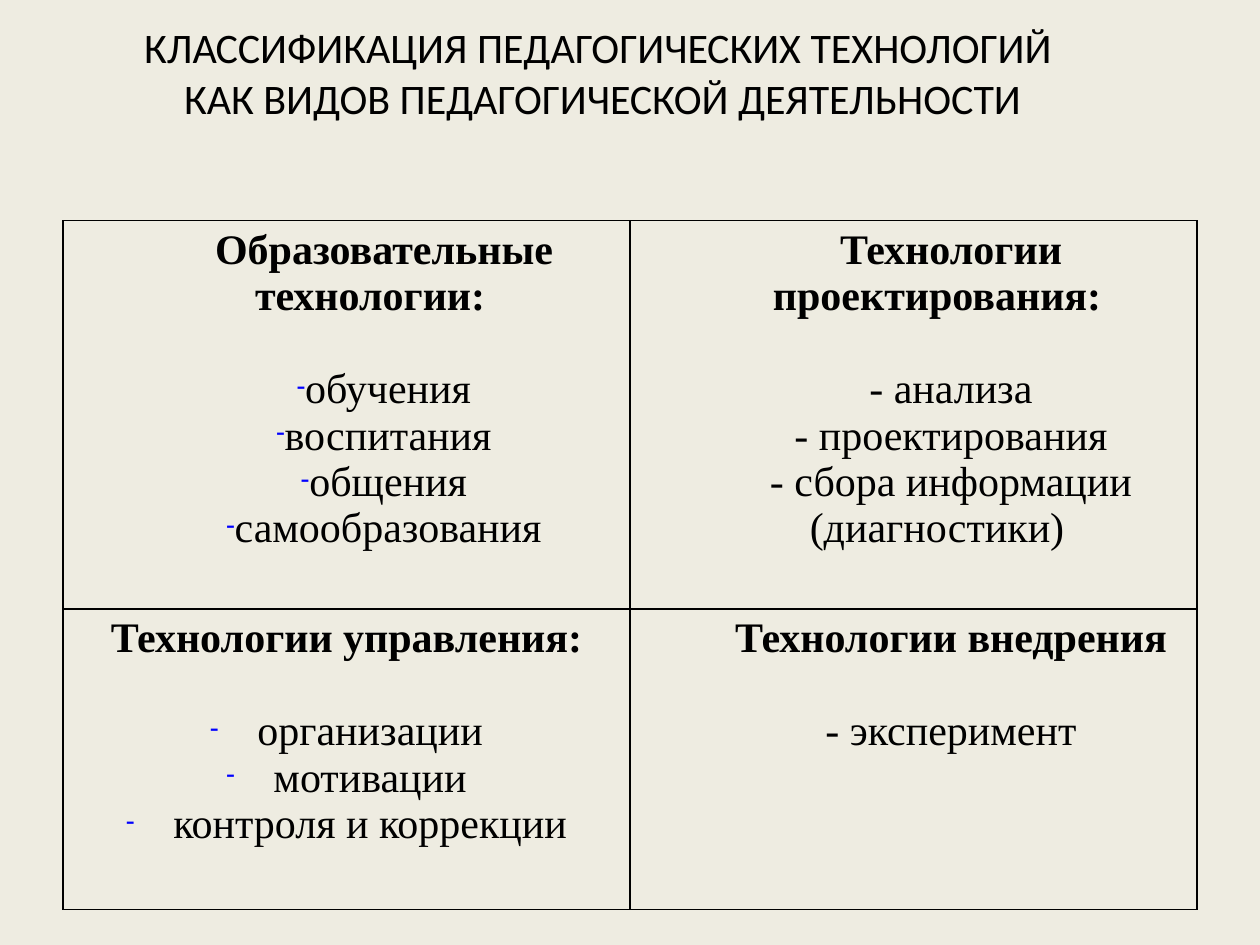
"""Build a slide that sorts teaching technologies into a two by two table."""
from dataclasses import dataclass

from lxml.etree import SubElement
from pptx import Presentation
from pptx.dml.color import RGBColor
from pptx.enum.text import MSO_ANCHOR, PP_ALIGN
from pptx.oxml import parse_xml
from pptx.oxml.ns import nsdecls, qn
from pptx.util import Cm, Pt


@dataclass(frozen=True)
class Theme:
    paper: str = "EEECE1"
    ink: str = "000000"
    dash: str = "0000FF"
    head: str = "Calibri"
    body: str = "Times New Roman"
    size: int = 24
    gap: float = 26.5
    line: int = 1


theme = Theme()


def write(para, text, font=theme.body, bold=False, after=0, left=0, indent=0, bullet=False):
    para.alignment = PP_ALIGN.CENTER
    para.space_after = Pt(after)
    for i, part in enumerate(text.split("\n")):
        if i:
            para.add_line_break()
        run = para.add_run()
        run.text = part
        run.font.name = font
        run.font.size = Pt(theme.size)
        run.font.bold = bold
        run.font.color.rgb = RGBColor.from_string(theme.ink)
    props = para._p.get_or_add_pPr()
    props.set("marL", str(Cm(left)))
    props.set("indent", str(Cm(indent)))
    if bullet:
        color = SubElement(props, qn("a:buClr"))
        SubElement(color, qn("a:srgbClr"), val=theme.dash)
        SubElement(props, qn("a:buSzPct"), val="60000")
        SubElement(props, qn("a:buChar"), char="-")
        tabs = SubElement(props, qn("a:tabLst"))
        SubElement(tabs, qn("a:tab"), pos=str(Cm(1.27)), algn="l")
    else:
        SubElement(props, qn("a:buNone"))


def border(cell):
    props = cell._tc.get_or_add_tcPr()
    for i, side in enumerate("LRTB"):
        props.insert(i, parse_xml(
            f'<a:ln{side} {nsdecls("a")} w="{Pt(theme.line)}"><a:solidFill>'
            f'<a:srgbClr val="{theme.ink}"/></a:solidFill></a:ln{side}>'))


deck = Presentation()
deck.slide_width, deck.slide_height = Cm(25.4), Cm(19.05)
slide = deck.slides.add_slide(deck.slide_layouts[6])
slide.background.fill.solid()
slide.background.fill.fore_color.rgb = RGBColor.from_string(theme.paper)

title = slide.shapes.add_textbox(0, 0, Cm(24.3), Cm(2.92)).text_frame
title.word_wrap = True
title.vertical_anchor = MSO_ANCHOR.MIDDLE
write(title.paragraphs[0],
      "КЛАССИФИКАЦИЯ ПЕДАГОГИЧЕСКИХ ТЕХНОЛОГИЙ \nКАК ВИДОВ ПЕДАГОГИЧЕСКОЙ ДЕЯТЕЛЬНОСТИ",
      font=theme.head)

groups = [
    [("Образовательные технологии:", 0.56, True,
      ["обучения", "воспитания", "общения", "самообразования"]),
     ("Технологии проектирования:", 0.56, False,
      ["- анализа", "- проектирования", "- сбора информации (диагностики)"])],
    [("Технологии управления:", -0.95, True,
      ["организации", "мотивации", "контроля и коррекции"]),
     ("Технологии внедрения", 0.56, False, ["- эксперимент"])],
]
table = slide.shapes.add_table(2, 2, Cm(1.27), Cm(4.45), Cm(22.86), Cm(13.88)).table
table.first_row = table.horz_banding = False
for row, high in zip(table.rows, (7.83, 6.05)):
    row.height = Cm(high)

for r, row in enumerate(groups):
    for c, (name, indent, bullet, items) in enumerate(row):
        cell = table.cell(r, c)
        cell.fill.background()
        border(cell)
        frame = cell.text_frame
        write(frame.paragraphs[0], name, bold=True, after=theme.gap, left=0.95, indent=indent)
        for item in items:
            write(frame.add_paragraph(), item, left=0.95, indent=indent, bullet=bullet)

deck.save("out.pptx")
